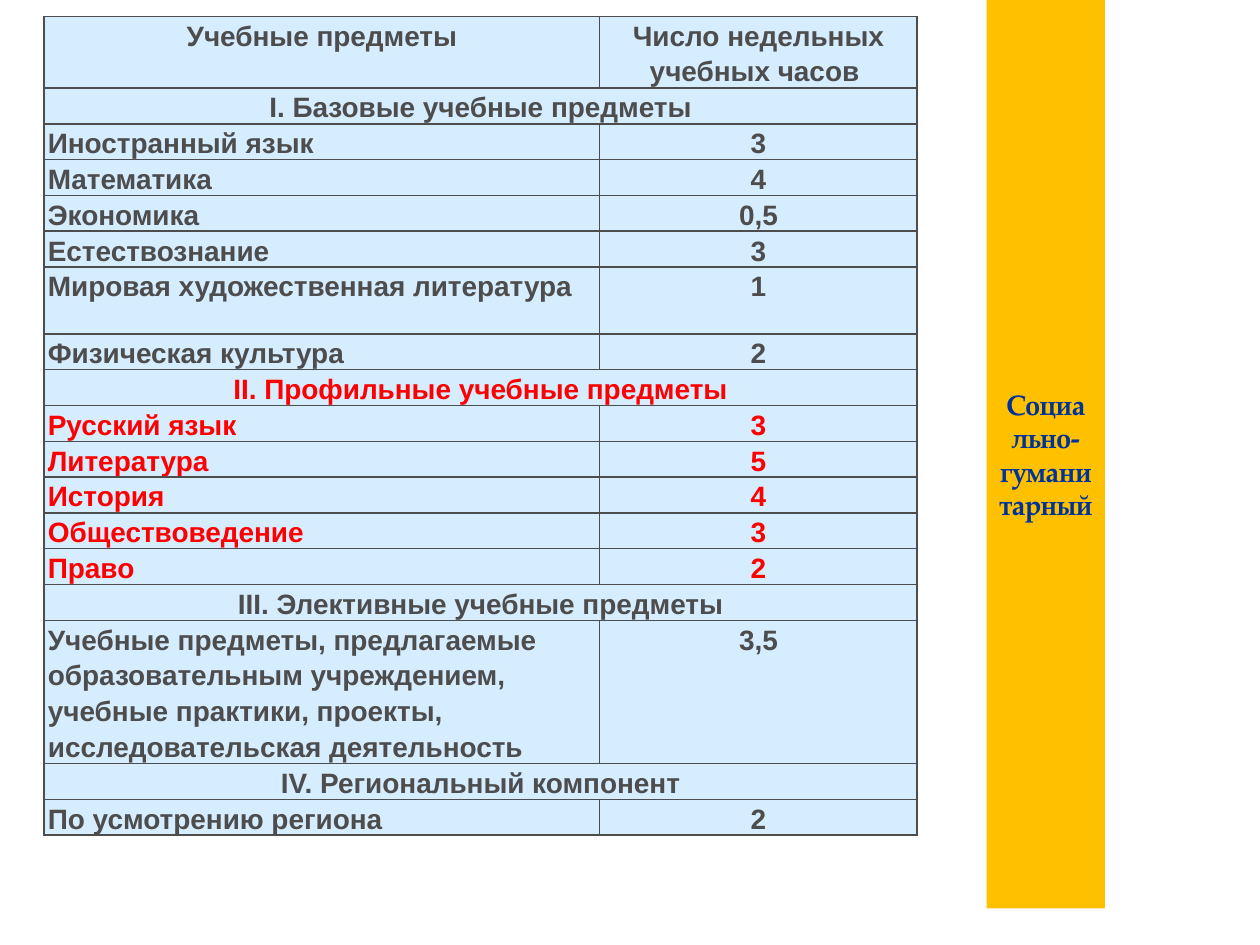
from dataclasses import dataclass

from lxml.etree import SubElement
from pptx import Presentation
from pptx.dml.color import RGBColor
from pptx.enum.text import MSO_ANCHOR, MSO_AUTO_SIZE, PP_ALIGN
from pptx.oxml.ns import qn
from pptx.util import Inches, Pt


@dataclass(frozen=True)
class Theme:
    grey: str = "4D4D4D"
    red: str = "FF0000"
    navy: str = "003399"
    amber: str = "FFC000"
    pale_blue: str = "D6ECFF"
    table_font: str = "Arial"
    title_font: str = "TeX Gyre Pagella"
    size: int = 16
    border: int = 1


THEME = Theme()
TITLE = "Социально-гуманитарный"
HEADER = ("Учебные предметы", "Число недельных учебных часов ")
SECTIONS = [
    ("I. Базовые учебные предметы", THEME.grey, [
        ("Иностранный язык", "3"),
        ("Математика", "4"),
        ("Экономика", "0,5"),
        ("Естествознание", "3"),
        ("Мировая художественная литература", "1"),
        ("Физическая культура", "2"),
    ]),
    ("II. Профильные учебные предметы", THEME.red, [
        ("Русский язык", "3"),
        ("Литература", "5"),
        ("История", "4"),
        ("Обществоведение", "3"),
        ("Право", "2"),
    ]),
    ("III. Элективные учебные предметы", THEME.grey, [
        ("Учебные предметы, предлагаемые образовательным учреждением, "
         "учебные практики, проекты, исследовательская деятельность", "3,5"),
    ]),
    ("IV. Региональный компонент", THEME.grey, [("По усмотрению региона", "2")]),
]
COLUMN_WIDTHS = (4.41, 2.52)
LINE_HEIGHT = 0.26
TALL_ROWS = {0: 0.53, 6: 0.53, 15: 1.05}


def style_font(font, name, color):
    font.name, font.size, font.bold = name, Pt(THEME.size), True
    font.color.rgb = RGBColor.from_string(color)


def add_borders(cell):
    """Outline the cell; call before its fill is set, as borders come first in XML."""
    properties = cell._tc.get_or_add_tcPr()
    for side in ("a:lnL", "a:lnR", "a:lnT", "a:lnB"):
        line = SubElement(properties, qn(side), w=str(Pt(THEME.border)))
        fill = SubElement(line, qn("a:solidFill"))
        SubElement(fill, qn("a:srgbClr"), val=THEME.grey)


def fill_cell(cell, text, color, alignment):
    add_borders(cell)
    cell.fill.solid()
    cell.fill.fore_color.rgb = RGBColor.from_string(THEME.pale_blue)
    cell.margin_left = cell.margin_right = Inches(0.03)
    cell.margin_top = cell.margin_bottom = 0
    cell.text = text
    paragraph = cell.text_frame.paragraphs[0]
    paragraph.alignment = alignment
    paragraph.line_spacing = 1.15
    style_font(paragraph.font, THEME.table_font, color)


def add_title(slide):
    title = slide.shapes.title
    title.left, title.top = Inches(7.83), 0
    title.width, title.height = Inches(0.94), Inches(7.21)
    title.fill.solid()
    title.fill.fore_color.rgb = RGBColor.from_string(THEME.amber)
    frame = title.text_frame
    frame.text = TITLE
    frame.word_wrap = True
    frame.auto_size = MSO_AUTO_SIZE.NONE
    frame.vertical_anchor = MSO_ANCHOR.MIDDLE
    paragraph = frame.paragraphs[0]
    paragraph.alignment = PP_ALIGN.CENTER
    style_font(paragraph.font, THEME.title_font, THEME.navy)


def add_subject_table(slide):
    rows = [(HEADER, THEME.grey)]
    for heading, color, subjects in SECTIONS:
        rows.append(((heading, ""), color))
        rows.extend((subject, color) for subject in subjects)
    heights = [TALL_ROWS.get(i, LINE_HEIGHT) for i in range(len(rows))]

    table = slide.shapes.add_table(
        len(rows), len(COLUMN_WIDTHS), Inches(0.35), Inches(0.13),
        Inches(sum(COLUMN_WIDTHS)), Inches(sum(heights))).table
    for column, width in zip(table.columns, COLUMN_WIDTHS):
        column.width = Inches(width)
    for index, ((subject, hours), color) in enumerate(rows):
        table.rows[index].height = Inches(heights[index])
        name_cell, hours_cell = table.cell(index, 0), table.cell(index, 1)
        is_section = not hours
        if is_section:
            name_cell.merge(hours_cell)
        centred = is_section or index == 0
        fill_cell(name_cell, subject, color,
                  PP_ALIGN.CENTER if centred else PP_ALIGN.LEFT)
        fill_cell(hours_cell, hours, color, PP_ALIGN.CENTER)


def main():
    deck = Presentation()
    deck.slide_width, deck.slide_height = Inches(10), Inches(7.5)
    slide = deck.slides.add_slide(deck.slide_layouts[5])
    add_title(slide)
    add_subject_table(slide)
    deck.save("out.pptx")


if __name__ == "__main__":
    main()
